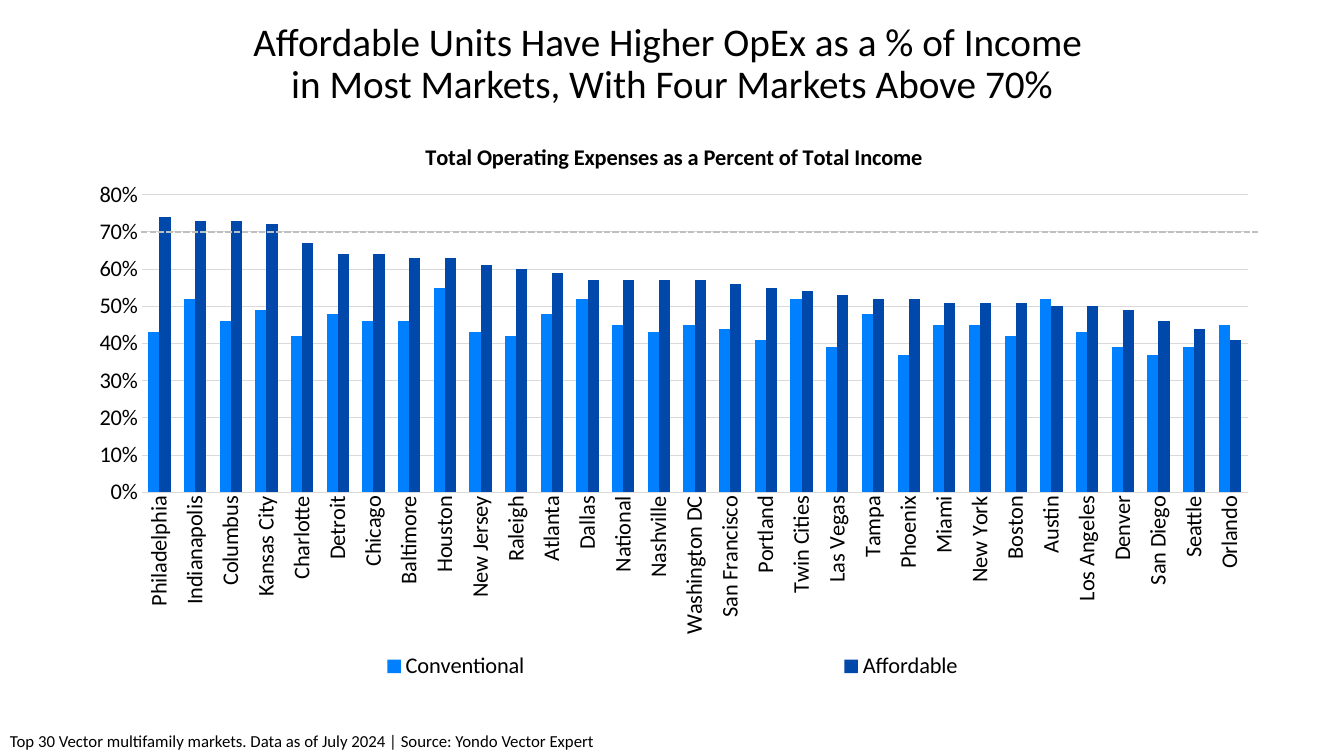
from dataclasses import dataclass

from lxml.etree import SubElement
from pptx import Presentation
from pptx.chart.data import CategoryChartData
from pptx.dml.color import RGBColor
from pptx.enum.chart import XL_CHART_TYPE, XL_LEGEND_POSITION, XL_TICK_MARK
from pptx.enum.dml import MSO_LINE
from pptx.enum.shapes import MSO_CONNECTOR
from pptx.enum.text import MSO_ANCHOR, MSO_AUTO_SIZE, PP_ALIGN
from pptx.oxml import parse_xml
from pptx.oxml.ns import nsdecls, qn
from pptx.util import Inches, Pt


@dataclass(frozen=True)
class Theme:
    font: str = "Calibri"
    chart_font: str = "Roboto"
    text: RGBColor = RGBColor(0, 0, 0)
    grid: RGBColor = RGBColor(0xD9, 0xD9, 0xD9)
    threshold: RGBColor = RGBColor(0xBF, 0xBF, 0xBF)
    series: tuple = (RGBColor(0x00, 0x7F, 0xFF), RGBColor(0x00, 0x48, 0xA9))
    title_size: Pt = Pt(28)
    chart_size: Pt = Pt(16)
    base_size: Pt = Pt(10)
    note_size: Pt = Pt(12)


THEME = Theme()

TITLE_LINES = (
    "Affordable Units Have Higher OpEx as a % of Income ",
    "in Most Markets, With Four Markets Above 70%",
)
CHART_TITLE = "Total Operating Expenses as a Percent of Total Income"
SOURCE_NOTE = ("Top 30 Vector multifamily markets. Data as of July 2024 | "
               "Source: Yondo Vector Expert")

# Market, conventional %, affordable %
MARKETS = (
    ("Philadelphia", 43, 74), ("Indianapolis", 52, 73), ("Columbus", 46, 73),
    ("Kansas City", 49, 72), ("Charlotte", 42, 67), ("Detroit", 48, 64),
    ("Chicago", 46, 64), ("Baltimore", 46, 63), ("Houston", 55, 63),
    ("New Jersey", 43, 61), ("Raleigh", 42, 60), ("Atlanta", 48, 59),
    ("Dallas", 52, 57), ("National", 45, 57), ("Nashville", 43, 57),
    ("Washington DC", 45, 57), ("San Francisco", 44, 56), ("Portland", 41, 55),
    ("Twin Cities", 52, 54), ("Las Vegas", 39, 53), ("Tampa", 48, 52),
    ("Phoenix", 37, 52), ("Miami", 45, 51), ("New York", 45, 51),
    ("Boston", 42, 51), ("Austin", 52, 50), ("Los Angeles", 43, 50),
    ("Denver", 39, 49), ("San Diego", 37, 46), ("Seattle", 39, 44),
    ("Orlando", 45, 41),
)


def style_font(font, size, bold=False, name=THEME.font):
    font.name = name
    font.size = size
    font.bold = bold
    font.color.rgb = THEME.text


def add_title(slide):
    title = slide.shapes.title
    title.left, title.top = Inches(0), Inches(0.17)
    title.width, title.height = Inches(13.33), Inches(0.95)
    text_frame = title.text_frame
    text_frame.text = "\n".join(TITLE_LINES)
    text_frame.auto_size = MSO_AUTO_SIZE.NONE
    text_frame.vertical_anchor = MSO_ANCHOR.TOP
    for paragraph in text_frame.paragraphs:
        paragraph.alignment = PP_ALIGN.CENTER
        paragraph.line_spacing = 0.9
        paragraph.space_before = Pt(0)
        style_font(paragraph.runs[0].font, THEME.title_size)


def add_note(slide):
    box = slide.shapes.add_textbox(Inches(0), Inches(7.2), Inches(11.68), Inches(0.3))
    text_frame = box.text_frame
    text_frame.word_wrap = True
    text_frame.text = SOURCE_NOTE
    style_font(text_frame.paragraphs[0].runs[0].font, THEME.note_size)


def place_chart_part(part, inner=False, **fractions):
    """Fix a chart part at fractions of the chart's width and height."""
    for old_layout in part.findall(qn("c:layout")):
        part.remove(old_layout)
    layout = parse_xml(f"<c:layout {nsdecls('c')}><c:manualLayout/></c:layout>")
    settings = {"layoutTarget": "inner"} if inner else {}
    settings.update(xMode="edge", yMode="edge", **fractions)
    for tag, value in settings.items():
        SubElement(layout[0], qn(f"c:{tag}")).set("val", str(value))
    overlay = part.find(qn("c:overlay"))
    if overlay is None:
        part.insert(0, layout)
    else:
        overlay.addprevious(layout)


def style_axes(chart):
    for axis in (chart.category_axis, chart.value_axis):
        axis.major_tick_mark = XL_TICK_MARK.NONE
        axis.minor_tick_mark = XL_TICK_MARK.NONE
        style_font(axis.tick_labels.font, THEME.chart_size)

    category_axis = chart.category_axis
    category_axis.format.line.color.rgb = THEME.grid
    category_axis.format.line.width = Pt(0.75)
    label_body = category_axis._element.find(qn("c:txPr")).find(qn("a:bodyPr"))
    label_body.set("rot", "-5400000")
    label_body.set("vert", "horz")

    value_axis = chart.value_axis
    value_axis.minimum_scale, value_axis.maximum_scale = 0, 0.8
    value_axis.major_unit = 0.1
    value_axis.tick_labels.number_format = "0%"
    value_axis.tick_labels.number_format_is_linked = False
    value_axis.format.line.fill.background()
    grid_line = value_axis.major_gridlines.format.line
    grid_line.color.rgb = THEME.grid
    grid_line.width = Pt(0.75)


def add_expense_chart(slide):
    names, conventional, affordable = zip(*MARKETS)
    data = CategoryChartData(number_format="0%")
    data.categories = names
    for name, percents in (("Conventional", conventional), ("Affordable", affordable)):
        data.add_series(name, [percent / 100 for percent in percents])
    chart = slide.shapes.add_chart(
        XL_CHART_TYPE.COLUMN_CLUSTERED, Inches(0.74), Inches(1.14),
        Inches(11.86), Inches(5.7), data).chart
    style_font(chart.font, THEME.base_size, name=THEME.chart_font)

    # Columns
    plot = chart.plots[0]
    plot.gap_width = 120
    plot.overlap = 0
    plot.vary_by_categories = False
    for series, color in zip(plot.series, THEME.series):
        series.format.fill.solid()
        series.format.fill.fore_color.rgb = color
        series.invert_if_negative = False
    style_axes(chart)

    # Chart title and legend
    title_frame = chart.chart_title.text_frame
    title_frame.text = CHART_TITLE
    style_font(title_frame.paragraphs[0].runs[0].font, THEME.chart_size, bold=True)
    chart.has_legend = True
    chart.legend.position = XL_LEGEND_POSITION.BOTTOM
    chart.legend.include_in_layout = False
    style_font(chart.legend.font, THEME.chart_size)

    # Placement inside the chart
    plot_area = chart._chartSpace.chart.plotArea
    place_chart_part(plot_area, inner=True, x=0.056, y=0.139, w=0.925, h=0.518)
    place_chart_part(chart.chart_title._element, x=0.29, y=0.04)
    place_chart_part(chart.legend._element, x=0, y=0.92, w=1, h=0.08)


def add_threshold(slide):
    line = slide.shapes.add_connector(
        MSO_CONNECTOR.STRAIGHT, Inches(1.4), Inches(2.3), Inches(12.48), Inches(2.3))
    line.line.color.rgb = THEME.threshold
    line.line.width = Pt(1.5)
    line.line.dash_style = MSO_LINE.SQUARE_DOT
    SubElement(line._element.spPr, qn("a:effectLst"))


def main():
    presentation = Presentation()
    presentation.slide_width = Inches(13.33)
    presentation.slide_height = Inches(7.5)
    slide = presentation.slides.add_slide(presentation.slide_layouts.get_by_name("Title Only"))
    add_title(slide)
    add_expense_chart(slide)
    add_note(slide)
    add_threshold(slide)
    presentation.save("out.pptx")


if __name__ == "__main__":
    main()
